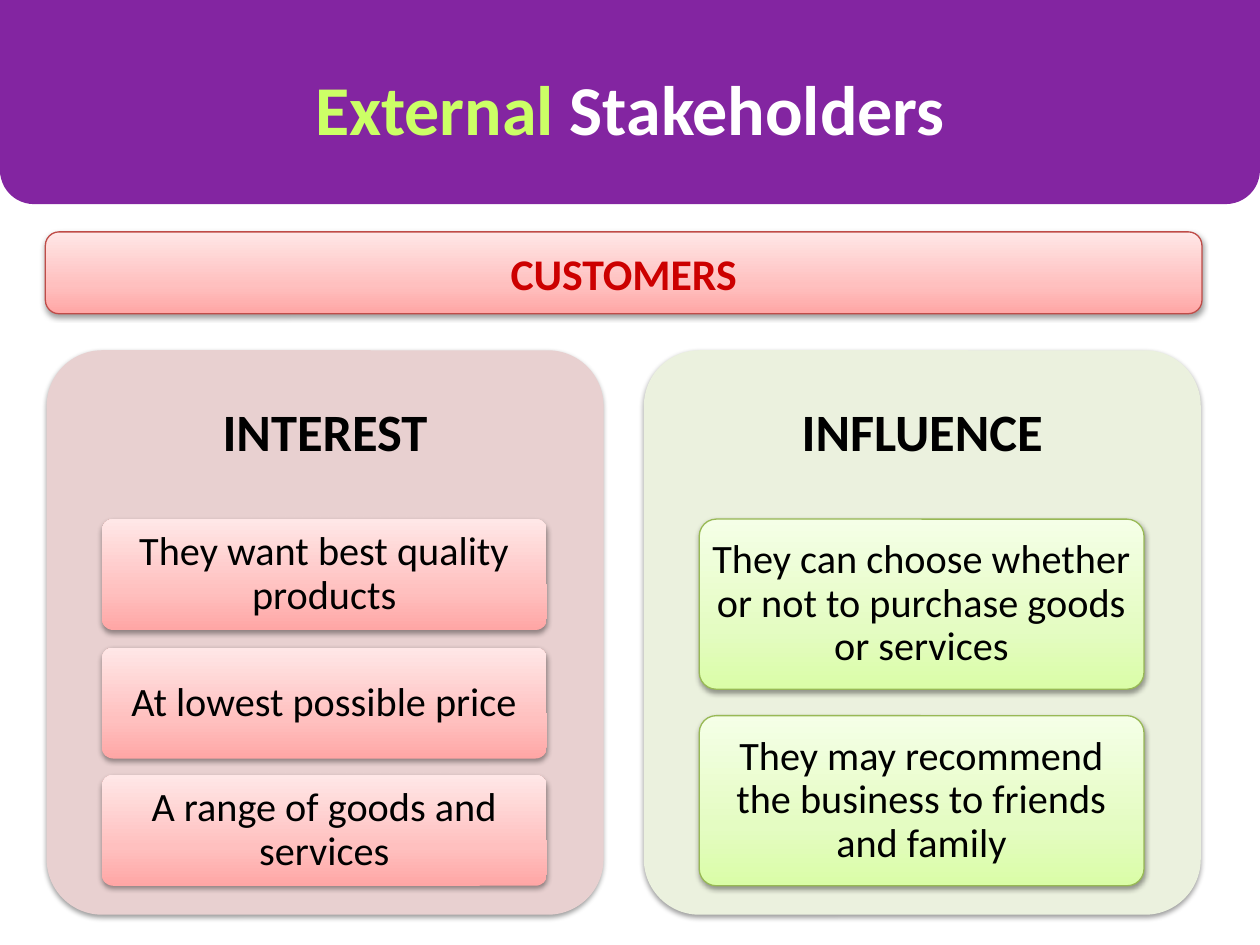
from copy import deepcopy

from lxml import etree
from pptx import Presentation
from pptx.dml.color import RGBColor
from pptx.enum.shapes import MSO_SHAPE
from pptx.enum.text import MSO_ANCHOR, MSO_AUTO_SIZE, PP_ALIGN
from pptx.oxml.ns import qn
from pptx.util import Pt

ROUNDED = MSO_SHAPE.ROUNDED_RECTANGLE
RECTANGLE = MSO_SHAPE.RECTANGLE
MIDDLE = MSO_ANCHOR.MIDDLE
CENTER = PP_ALIGN.CENTER
TITLE_ONLY = 5
PX = 9144
FONT = "Calibri"
GAP_RATIO = 0.154

COLORS = {
    "purple": "8325A1",
    "lime": "CCFF66",
    "white": "FFFFFF",
    "black": "000000",
    "red": "CC0000",
    "red_line": "BF4C48",
    "green_line": "98B955",
    "pink_panel": "E8D0D0",
    "green_panel": "EBF1DE",
}
GRADIENTS = {
    "red": ["FFA6A5", "FFC0BF", "FFE7E7"],
    "green": ["DAFDA7", "E4FCC2", "F5FFE7"],
}
STOP_POSITIONS = [0, 0.35, 1]

COLUMNS = [
    {
        "heading": "INTEREST",
        "panel": "pink_panel",
        "gradient": "red",
        "line": None,
        "cards": [
            "They want best quality products",
            "At lowest possible price",
            "A range of goods and services",
        ],
    },
    {
        "heading": "INFLUENCE",
        "panel": "green_panel",
        "gradient": "green",
        "line": "green_line",
        "cards": [
            "They can choose whether or not to purchase goods or services",
            "They may recommend the business to friends and family",
        ],
    },
]


def color(name):
    return RGBColor.from_string(COLORS[name])


def emu(*lengths):
    return [length * PX for length in lengths]


def add_box(slide, kind, box, fill=None, gradient=None, line=None, radius=None):
    shape = slide.shapes.add_shape(kind, *emu(*box))
    shape.shadow.inherit = False
    if radius is not None:
        shape.adjustments[0] = radius
    if gradient:
        apply_gradient(shape, GRADIENTS[gradient])
    else:
        shape.fill.solid()
        shape.fill.fore_color.rgb = color(fill)
    if line:
        shape.line.color.rgb = color(line)
        shape.line.width = Pt(0.75)
    else:
        shape.line.fill.background()
    return shape


def apply_gradient(shape, stop_colors):
    shape.fill.gradient()
    shape.fill.gradient_angle = 90
    stop_list = shape._element.spPr.find(".//" + qn("a:gsLst"))
    stop_list.append(deepcopy(stop_list[0]))
    stops = zip(shape.fill.gradient_stops, STOP_POSITIONS, stop_colors)
    for stop, position, stop_color in stops:
        stop.position = position
        stop.color.rgb = RGBColor.from_string(stop_color)


def add_shadow(shape):
    effects = shape._element.spPr.find(qn("a:effectLst"))
    shadow = etree.SubElement(
        effects, qn("a:outerShdw"), blurRad=str(Pt(3.1)), dist=str(Pt(1.6)),
        dir="5400000", rotWithShape="0")
    shade = etree.SubElement(shadow, qn("a:srgbClr"), val=COLORS["black"])
    etree.SubElement(shade, qn("a:alpha"), val="38000")


def write_text(shape, text, size, text_color="black", bold=False,
               insets=(10, 5), spacing=None):
    frame = shape.text_frame
    frame.word_wrap = True
    frame.vertical_anchor = MIDDLE
    frame.margin_left = frame.margin_right = insets[0] * PX
    frame.margin_top = frame.margin_bottom = insets[1] * PX
    paragraph = frame.paragraphs[0]
    paragraph.text = text
    paragraph.alignment = CENTER
    paragraph.line_spacing = spacing
    paragraph.font.name = FONT
    paragraph.font.size = Pt(size)
    paragraph.font.bold = bold
    paragraph.font.color.rgb = color(text_color)


def build_header(slide, box):
    left, top, width, height = box
    add_box(slide, ROUNDED, box, fill="purple", radius=0.167)
    add_box(slide, RECTANGLE, (left, top, width, 115), fill="purple")

    title = slide.shapes.title
    slide.shapes._spTree.append(title._element)
    title.left, title.top, title.width, title.height = emu(left, top + 47, width, 77)
    frame = title.text_frame
    frame.word_wrap = True
    frame.auto_size = MSO_AUTO_SIZE.SHAPE_TO_FIT_TEXT
    frame.vertical_anchor = MSO_ANCHOR.TOP
    paragraph = frame.paragraphs[0]
    paragraph.alignment = CENTER
    paragraph.font.name = FONT
    paragraph.font.size = Pt(40)
    paragraph.font.bold = True
    for text, text_color in [("External ", "lime"), ("Stakeholders", "white")]:
        run = paragraph.add_run()
        run.text = text
        run.font.color.rgb = color(text_color)


def build_group_banner(slide, box):
    banner = add_box(slide, ROUNDED, box, gradient="red", line="red_line")
    add_shadow(banner)
    write_text(banner, "CUSTOMERS", 25, "red", bold=True)


def build_column(slide, box, column):
    left, top, width, height = box
    panel = add_box(slide, ROUNDED, box, fill=column["panel"], radius=0.1)
    add_shadow(panel)
    heading = slide.shapes.add_textbox(*emu(left, top, width, 134))
    write_text(heading, column["heading"], 30, bold=True, insets=(12, 12), spacing=0.9)

    cards = column["cards"]
    stack_height = height - 134 - 23
    card_height = stack_height / (len(cards) + GAP_RATIO * (len(cards) - 1))
    pitch = card_height * (1 + GAP_RATIO)
    for index, text in enumerate(cards):
        card_top = round(top + 134 + index * pitch)
        card_box = (left + 44, card_top, width - 89, round(card_height))
        card = add_box(slide, ROUNDED, card_box, gradient=column["gradient"],
                       line=column["line"], radius=0.1)
        add_shadow(card)
        write_text(card, text, 23, insets=(6, 5), spacing=0.9)


def main():
    presentation = Presentation()
    presentation.slide_width, presentation.slide_height = emu(1000, 750)
    slide = presentation.slides.add_slide(presentation.slide_layouts[TITLE_ONLY])
    build_group_banner(slide, (36, 184, 918, 65))
    for index, column in enumerate(COLUMNS):
        build_column(slide, (37 + index * 474, 278, 442, 448), column)
    build_header(slide, (0, 0, 1000, 162))
    presentation.save("out.pptx")


if __name__ == "__main__":
    main()
